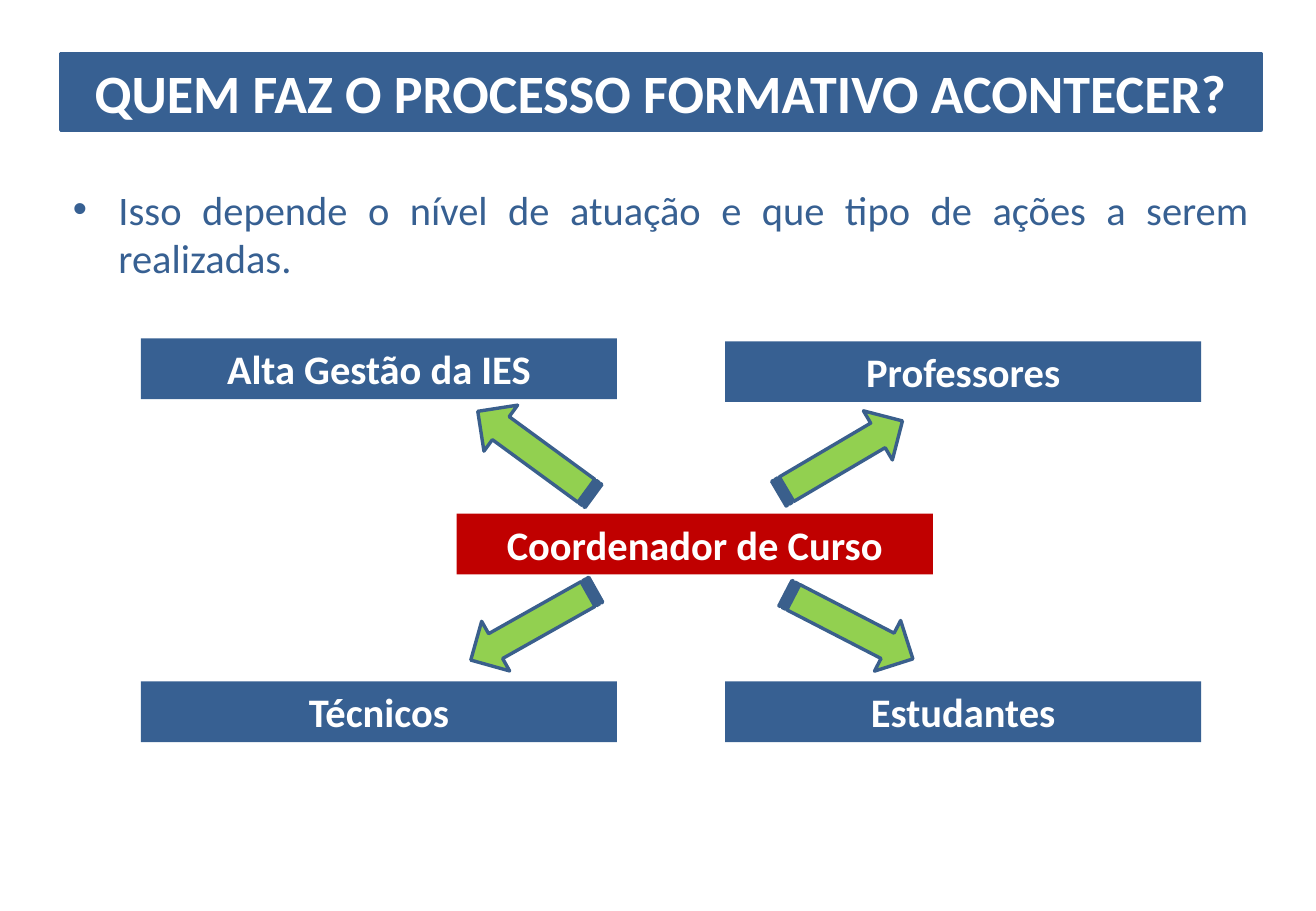
import pptx
import pptx.util
import pptx.dml.color
import pptx.enum.shapes
import pptx.enum.text

Pt = pptx.util.Pt
Kind = pptx.enum.shapes.MSO_SHAPE
Align = pptx.enum.text.PP_ALIGN
Anchor = pptx.enum.text.MSO_ANCHOR
Fit = pptx.enum.text.MSO_AUTO_SIZE

BLUE, RED, GREEN, EDGE, WHITE = "376092", "C00000", "92D050", "3A5F8C", "FFFFFF"
TITLE = "QUEM FAZ O PROCESSO FORMATIVO ACONTECER?"
BODY = "Isso depende o nível de atuação e que tipo de ações a serem realizadas."

LEFT, RIGHT, LOW = 83.5, 429.8, 403.9
BOX = (282.2, 36)
ROLES = [  # text, left, top, fill
    ("Alta Gestão da IES", LEFT, 200.6, BLUE),
    ("Técnicos", LEFT, LOW, BLUE),
    ("Professores", RIGHT, 202.3, BLUE),
    ("Coordenador de Curso", 270.7, 304.5, RED),
    ("Estudantes", RIGHT, LOW, BLUE),
]
ARROW = (85, 33.8)
ARROWS = [  # left, top, angle
    (275, 252, 216.2),
    (460.8, 354.2, 27.3),
    (273.6, 353.5, 150.6),
    (455.8, 254.2, 329.5),
]


def rgb(code):
    return pptx.dml.color.RGBColor.from_string(code)


def paint(shape, fill, edge=None):
    shape.fill.solid()
    shape.fill.fore_color.rgb = rgb(fill)
    if edge:
        shape.line.color.rgb = rgb(edge)
        shape.line.width = Pt(2)
    else:
        shape.line.fill.background()


def place(shape, *rect):
    shape.left, shape.top, shape.width, shape.height = map(Pt, rect)


def write(shape, text, size, color, bold, align, anchor):
    frame = shape.text_frame
    frame.text = text
    frame.word_wrap = True
    frame.auto_size = Fit.NONE
    frame.vertical_anchor = anchor
    para = frame.paragraphs[0]
    para.alignment = align
    para.space_before = Pt(0)
    font = para.runs[0].font
    font.name, font.size, font.bold = "Calibri", Pt(size), bold
    font.color.rgb = rgb(color)


def add(slide, kind, *rect):
    shape = slide.shapes.add_shape(kind, *map(Pt, rect))
    shape.shadow.inherit = False
    return shape


def main():
    deck = pptx.Presentation()
    deck.slide_width, deck.slide_height = Pt(780), Pt(540)
    slide = deck.slides.add_slide(deck.slide_layouts[1])

    title, body = slide.placeholders
    place(title, 36, 31.7, 711.4, 45.4)
    paint(title, BLUE, BLUE)
    write(title, TITLE, 32, WHITE, True, Align.CENTER, Anchor.MIDDLE)
    place(body, 36, 105.8, 711.4, 368.6)
    write(body, BODY, 24, BLUE, False, Align.JUSTIFY, Anchor.TOP)

    for text, left, top, fill in ROLES:
        box = add(slide, Kind.RECTANGLE, left, top, *BOX)
        paint(box, fill)
        write(box, text, 24, WHITE, True, Align.CENTER, Anchor.MIDDLE)

    for left, top, angle in ARROWS:
        arrow = add(slide, Kind.STRIPED_RIGHT_ARROW, left, top, *ARROW)
        arrow.rotation = angle
        paint(arrow, GREEN, EDGE)

    deck.save("out.pptx")


if __name__ == "__main__":
    main()
